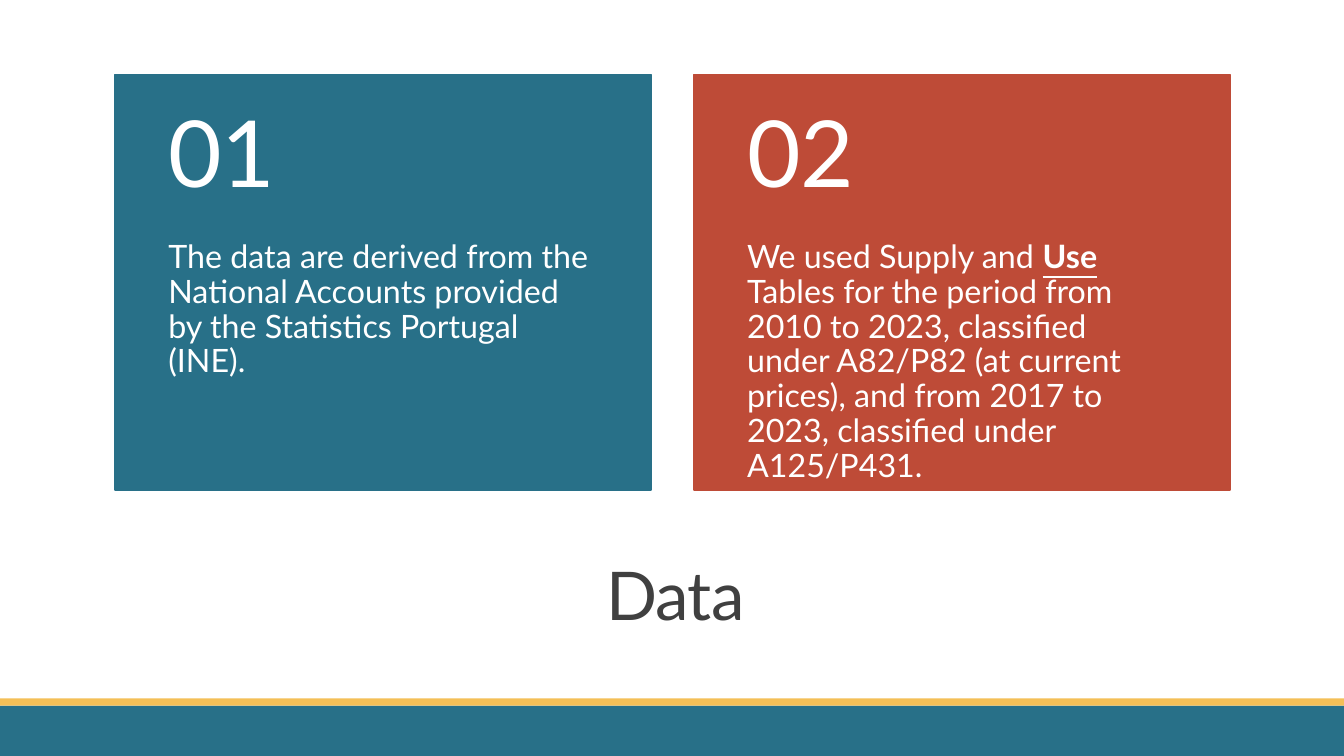
from pptx import Presentation
from pptx.dml.color import RGBColor
from pptx.enum.shapes import MSO_SHAPE as Preset
from pptx.enum.text import MSO_ANCHOR as Anchor, MSO_AUTO_SIZE as AutoSize, PP_ALIGN as Align
from pptx.util import Inches, Pt

TEAL = RGBColor(0x28, 0x70, 0x88)
RED = RGBColor(0xBE, 0x4B, 0x37)
GOLD = RGBColor(0xF4, 0xBF, 0x57)
WHITE = RGBColor(0xFF, 0xFF, 0xFF)
CHARCOAL = RGBColor(0x40, 0x40, 0x40)

SLIDE_WIDTH = 13.33
CARD_TOP, CARD_WIDTH, CARD_HEIGHT = 0.74, 5.32, 4.12
CARD_LEFT, CARD_PITCH = 1.14, 5.74
NUMBER_HEIGHT = 1.65
SIDE_MARGIN = 0.53

CARDS = [
    (TEAL, [("The data are derived from the National Accounts provided "
             "by the Statistics Portugal (INE).", False)]),
    (RED, [("We used Supply and ", False),
           ("Use", True),
           (" Tables for the period from 2010 to 2023, classified under A82/P82 "
            "(at current prices), and from 2017 to 2023, classified under A125/P431.", False)]),
]


class DataSlide:
    """Holds the slide and its style, with a method for each kind of element."""

    font_name = "Lato"

    def __init__(self, slide):
        self.slide = slide

    def style(self, run, size, color, emphasis=False):
        """Format one run."""
        font = run.font
        font.name = self.font_name
        font.size = Pt(size)
        font.color.rgb = color
        font.bold = font.underline = emphasis

    def title(self, wording):
        """Place the centred slide title."""
        heading = self.slide.shapes.title
        heading.left, heading.top = Inches(1.2), Inches(5.3)
        heading.width, heading.height = Inches(11), Inches(1.3)
        frame = heading.text_frame
        frame.text = wording
        frame.auto_size = AutoSize.NONE
        frame.vertical_anchor = Anchor.MIDDLE
        line = frame.paragraphs[0]
        line.alignment = Align.CENTER
        line.line_spacing = 0.85
        run = line.runs[0]
        self.style(run, 48, CHARCOAL)
        run.font._element.set("spc", "-50")

    def block(self, left, top, width, height, color, outline=None):
        """Draw a filled rectangle."""
        block = self.slide.shapes.add_shape(
            Preset.RECTANGLE, Inches(left), Inches(top), Inches(width), Inches(height))
        block.shadow.inherit = False
        block.fill.solid()
        block.fill.fore_color.rgb = color
        if outline:
            block.line.color.rgb = color
            block.line.width = Pt(outline)
        else:
            block.line.fill.background()

    def text(self, left, top, height, pieces, size, anchor, margins):
        """Write white text in a box as wide as a card."""
        box = self.slide.shapes.add_textbox(
            Inches(left), Inches(top), Inches(CARD_WIDTH), Inches(height))
        frame = box.text_frame
        frame.word_wrap = True
        frame.vertical_anchor = anchor
        frame.margin_left = frame.margin_right = Inches(SIDE_MARGIN)
        frame.margin_top, frame.margin_bottom = map(Inches, margins)
        line = frame.paragraphs[0]
        line.alignment = Align.LEFT
        line.line_spacing = 0.9
        for wording, emphasis in pieces:
            run = line.add_run()
            run.text = wording
            self.style(run, size, WHITE, emphasis)

    def card(self, index, color, pieces):
        """Draw a numbered card."""
        left = CARD_LEFT + index * CARD_PITCH
        self.block(left, CARD_TOP, CARD_WIDTH, CARD_HEIGHT, color, 1.25)
        self.text(left, CARD_TOP + NUMBER_HEIGHT, CARD_HEIGHT - NUMBER_HEIGHT,
                  pieces, 23, Anchor.TOP, (0, 0.36))
        self.text(left, CARD_TOP, NUMBER_HEIGHT,
                  [(f"{index + 1:02}", False)], 66, Anchor.MIDDLE, (0.18, 0.18))


def main():
    """Build and save the slide."""
    deck = Presentation()
    deck.slide_width, deck.slide_height = Inches(SLIDE_WIDTH), Inches(7.5)
    page = DataSlide(deck.slides.add_slide(deck.slide_layouts[5]))
    page.block(0, 7, SLIDE_WIDTH, 0.5, TEAL)
    page.block(0, 6.93, SLIDE_WIDTH, 0.07, GOLD)
    page.title("Data")
    for index, (color, pieces) in enumerate(CARDS):
        page.card(index, color, pieces)
    deck.save("out.pptx")


if __name__ == "__main__":
    main()
